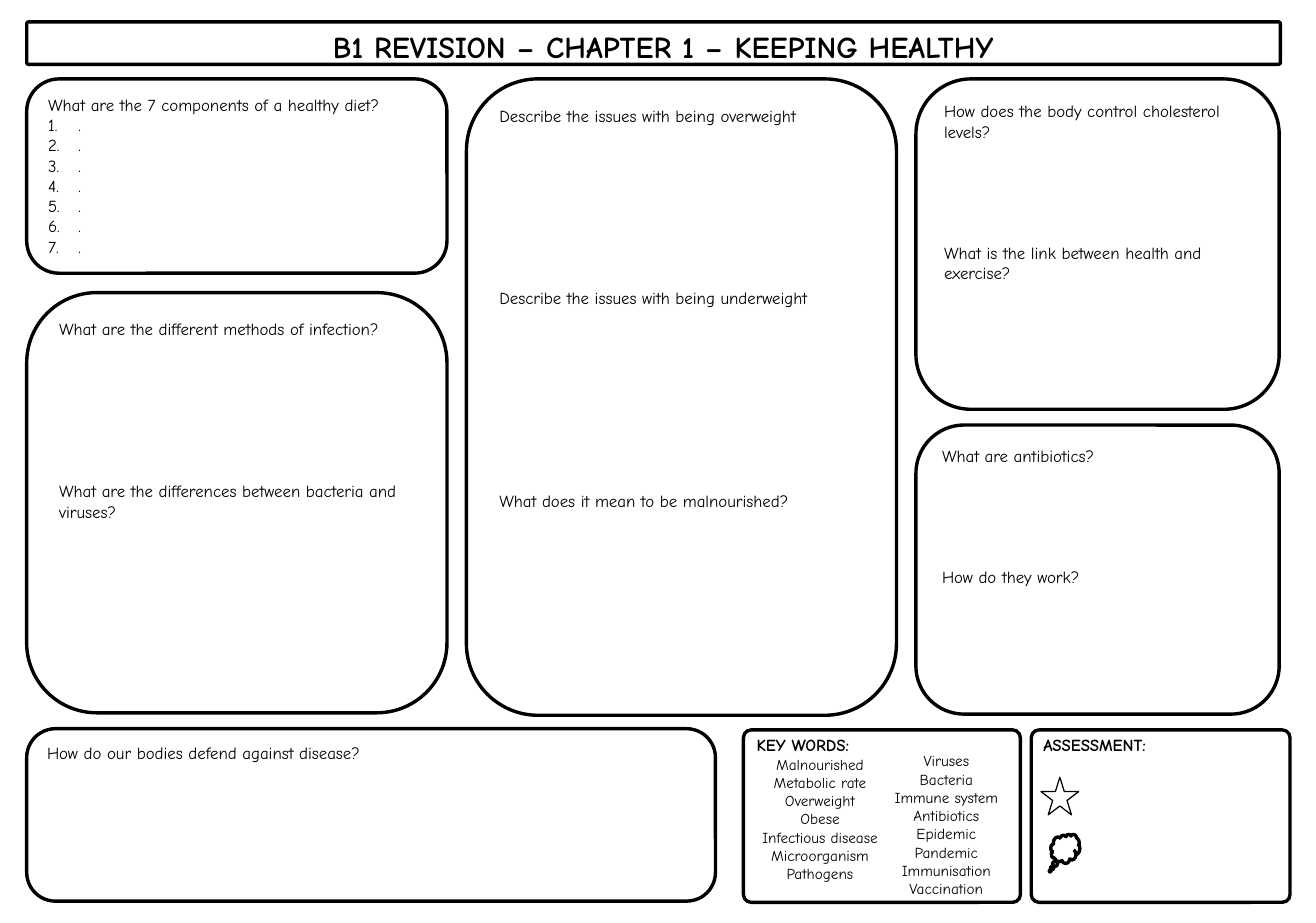
from dataclasses import dataclass

from lxml import etree
from pptx import Presentation
from pptx.dml.color import RGBColor
from pptx.enum import shapes, text
from pptx.oxml import ns
from pptx.util import Inches, Pt

COLORS = {"ink": "000000", "paper": "FFFFFF"}
FONT = "Comic Neue"
SLIDE_WIDTH, SLIDE_HEIGHT = 65 / 6, 7.6
QUESTION_SIZE = 10
WORD_SIZE = 9
LINE_PITCH = 12  # points taken by one line of question text
PANEL_CORNER = 0.16667
FRAME_CORNER = 0.045


@dataclass(frozen=True)
class Box:
    left: float
    top: float
    width: float
    height: float

    def lengths(self) -> tuple:
        return tuple(map(Inches, (self.left, self.top, self.width, self.height)))


@dataclass(frozen=True)
class Line:
    text: str
    size: int = QUESTION_SIZE
    bold: bool = False
    centered: bool = False
    numbered: bool = False
    answer_lines: int = 0  # writing lines left free above


@dataclass(frozen=True)
class Panel:
    box: Box
    lines: tuple[Line, ...]


@dataclass(frozen=True)
class Outline:
    kind: shapes.MSO_SHAPE
    box: Box
    adjustments: tuple[float, ...] = ()
    line_width: float = 2


LEFT, MIDDLE, RIGHT = 0.22, 3.84, 7.54
LEFT_WIDTH, RIGHT_WIDTH = 3.46, 2.99
UPPER, LOWER = 0.65, 6.0

PANELS = (
    Panel(Box(LEFT, UPPER, LEFT_WIDTH, 1.6), (
        Line("What are the 7 components of a healthy diet?"),
        *[Line(".", numbered=True)] * 7,
    )),
    Panel(Box(MIDDLE, UPPER, 3.54, 5.24), (
        Line("Describe the issues with being overweight"),
        Line("Describe the issues with being underweight", answer_lines=8),
        Line("What does it mean to be malnourished?", answer_lines=9),
    )),
    Panel(Box(LEFT, 2.41, LEFT_WIDTH, 3.46), (
        Line("What are the different methods of infection?"),
        Line("What are the differences between bacteria and viruses?", answer_lines=7),
    )),
    Panel(Box(LEFT, LOWER, 5.67, 1.42), (
        Line("How do our bodies defend against disease?"),
    )),
    Panel(Box(RIGHT, UPPER, RIGHT_WIDTH, 2.72), (
        Line("How does the body control cholesterol levels?"),
        Line("What is the link between health and exercise?", answer_lines=5),
    )),
    Panel(Box(RIGHT, 3.5, RIGHT_WIDTH, 2.38), (
        Line("What are antibiotics?"),
        Line("How do they work?", answer_lines=5),
    )),
)

ROUNDED = shapes.MSO_SHAPE.ROUNDED_RECTANGLE
OUTLINES = (
    Outline(ROUNDED, Box(LEFT, 0.18, 10.32, 0.35), (FRAME_CORNER,)),
    Outline(ROUNDED, Box(6.12, 6.01, 2.28, 1.42), (FRAME_CORNER,)),
    Outline(ROUNDED, Box(8.49, 6.01, 2.13, 1.42), (FRAME_CORNER,)),
    Outline(shapes.MSO_SHAPE.CLOUD_CALLOUT, Box(8.65, 6.87, 0.24, 0.24), (-0.522, 0.761)),
    Outline(shapes.MSO_SHAPE.STAR_5_POINT, Box(8.57, 6.4, 0.31, 0.31), line_width=0.75),
)


def words(*names: str) -> tuple[Line, ...]:
    return tuple(Line(name, WORD_SIZE, centered=True) for name in names)


LABELS = (
    Panel(Box(1.56, 0.18, 7.8, 0.4), (
        Line("B1 REVISION – CHAPTER 1 – KEEPING HEALTHY", 18, bold=True, centered=True),
    )),
    Panel(Box(6.13, LOWER, 1.24, 1.4), (
        Line("KEY WORDS:", bold=True),
        *words("Malnourished", "Metabolic rate", "Overweight", "Obese",
               "Infectious disease", "Microorganism", "Pathogens"),
    )),
    Panel(Box(7.17, 6.14, 1.24, 1.3), words(
        "Viruses", "Bacteria", "Immune system", "Antibiotics",
        "Epidemic", "Pandemic", "Immunisation", "Vaccination",
    )),
    Panel(Box(8.49, LOWER, 2.13, 1.6), (Line("ASSESSMENT:", bold=True),)),
)


def color(name: str) -> RGBColor:
    return RGBColor.from_string(COLORS[name])


def number_paragraph(paragraph) -> None:
    properties = paragraph._p.get_or_add_pPr()
    properties.set("marL", str(Inches(0.25)))
    properties.set("indent", str(-Inches(0.25)))
    etree.SubElement(properties, ns.qn("a:buFont"), typeface="+mj-lt")
    etree.SubElement(properties, ns.qn("a:buAutoNum"), type="arabicPeriod")


def write_lines(text_frame, lines: tuple[Line, ...]) -> None:
    text_frame.word_wrap = True
    text_frame.vertical_anchor = text.MSO_ANCHOR.TOP
    text_frame.text = "\n".join(line.text for line in lines)
    for paragraph, line in zip(text_frame.paragraphs, lines):
        paragraph.alignment = text.PP_ALIGN.CENTER if line.centered else text.PP_ALIGN.LEFT
        if line.answer_lines:
            paragraph.space_before = Pt(line.answer_lines * LINE_PITCH)
        if line.numbered:
            number_paragraph(paragraph)
        for run in paragraph.runs:
            run.font.name = FONT
            run.font.size = Pt(line.size)
            run.font.bold = line.bold
            run.font.color.rgb = color("ink")


def draw_outline(slide, outline: Outline):
    shape = slide.shapes.add_shape(outline.kind, *outline.box.lengths())
    shape.shadow.inherit = False
    shape.fill.background()
    shape.line.color.rgb = color("ink")
    shape.line.width = Pt(outline.line_width)
    for index, value in enumerate(outline.adjustments):
        shape.adjustments[index] = value
    return shape


def draw_panel(slide, panel: Panel) -> None:
    shape = draw_outline(slide, Outline(ROUNDED, panel.box, (PANEL_CORNER,)))
    shape.fill.solid()
    shape.fill.fore_color.rgb = color("paper")
    write_lines(shape.text_frame, panel.lines)


def draw_label(slide, label: Panel) -> None:
    write_lines(slide.shapes.add_textbox(*label.box.lengths()).text_frame, label.lines)


def main() -> None:
    presentation = Presentation()
    presentation.slide_width = Inches(SLIDE_WIDTH)
    presentation.slide_height = Inches(SLIDE_HEIGHT)
    slide = presentation.slides.add_slide(presentation.slide_layouts[6])
    for outline in OUTLINES:
        draw_outline(slide, outline)
    for label in LABELS:
        draw_label(slide, label)
    for panel in PANELS:
        draw_panel(slide, panel)
    presentation.save("out.pptx")


if __name__ == "__main__":
    main()
